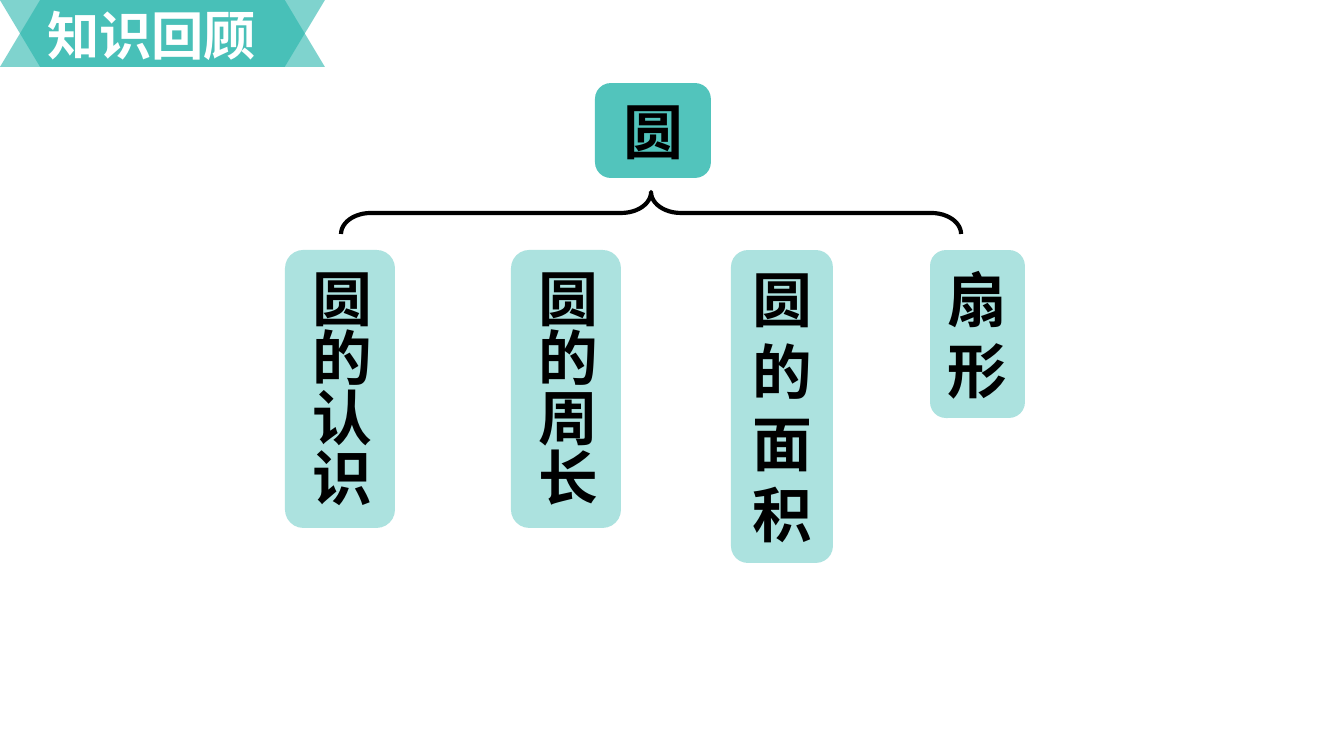
from dataclasses import dataclass

from lxml.etree import SubElement
from pptx import Presentation
from pptx.dml.color import RGBColor
from pptx.enum.shapes import MSO_SHAPE as Shape
from pptx.enum.text import MSO_ANCHOR as Anchor, MSO_AUTO_SIZE as AutoSize, PP_ALIGN as Align
from pptx.oxml.ns import qn
from pptx.util import Pt

PX = 914400 / 134.4  # EMU in one px


@dataclass(frozen=True)
class Theme:
    font: str = "Noto Sans CJK SC"
    teal: str = "1FB3A9"
    ink: str = "000000"
    white: str = "FFFFFF"
    title_size: int = 28
    node_size: int = 32
    brace_width: float = 2.25
    ribbon_alpha: int = 57
    root_alpha: int = 77
    branch_alpha: int = 37


@dataclass(frozen=True)
class Area:
    left: int
    top: int
    width: int
    height: int

    def emu(self) -> list[int]:
        return [round(v * PX) for v in (self.left, self.top, self.width, self.height)]


@dataclass(frozen=True)
class Node:
    text: str
    area: Area
    alpha: int
    vertical: bool = False


THEME = Theme()
BRANCH_TOP = 250


def branch(text: str, left: int, width: int, height: int, vertical: bool = False) -> Node:
    return Node(text, Area(left, BRANCH_TOP, width, height), THEME.branch_alpha, vertical)


RIBBON = Area(0, 0, 325, 67)
TITLE = Area(34, -3, 262, 77)
BRACE = Area(630, -97, 42, 620)  # before its quarter turn
NODES = [
    Node("圆", Area(595, 83, 116, 95), THEME.root_alpha),
    branch("圆的认识", 285, 110, 278, vertical=True),
    branch("圆的周长", 511, 110, 278, vertical=True),
    branch("圆的面积", 731, 102, 313),
    branch("扇形", 930, 95, 168),
]


def add_filled(page, kind: Shape, area: Area, alpha: int):
    """Add a borderless teal shape with the given opacity in percent."""
    shape = page.shapes.add_shape(kind, *area.emu())
    shape.shadow.inherit = False
    shape.line.fill.background()
    shape.fill.solid()
    shape.fill.fore_color.rgb = RGBColor.from_string(THEME.teal)
    color = shape.fill._xPr.find(f".//{qn('a:srgbClr')}")
    SubElement(color, qn("a:alpha"), val=str(alpha * 1000))
    return shape


def write(shape, text: str, size: int, color: str, align: Align) -> None:
    """Put one bold paragraph into a shape or text box."""
    frame = shape.text_frame
    frame.word_wrap = True
    frame.auto_size = AutoSize.SHAPE_TO_FIT_TEXT
    para = frame.paragraphs[0]
    para.text = text
    para.alignment = align
    font = para.font
    font.name, font.size, font.bold = THEME.font, Pt(size), True
    font.color.rgb = RGBColor.from_string(color)
    SubElement(font._rPr, qn("a:ea"), typeface=THEME.font)


def add_ribbon(page) -> None:
    for mirrored in (True, False):
        band = add_filled(page, Shape.PARALLELOGRAM, RIBBON, THEME.ribbon_alpha)
        band.adjustments[0] = 0.6
        if mirrored:
            band._element.spPr.xfrm.set("flipH", "1")
    box = page.shapes.add_textbox(*TITLE.emu())
    write(box, "知识回顾", THEME.title_size, THEME.white, Align.JUSTIFY)


def add_brace(page) -> None:
    brace = page.shapes.add_shape(Shape.LEFT_BRACE, *BRACE.emu())
    brace.rotation = 90
    brace.adjustments[0], brace.adjustments[1] = 0.71, 0.5
    brace.shadow.inherit = False
    brace.fill.background()
    brace.line.color.rgb = RGBColor.from_string(THEME.ink)
    brace.line.width = Pt(THEME.brace_width)


def add_node(page, node: Node) -> None:
    shape = add_filled(page, Shape.ROUNDED_RECTANGLE, node.area, node.alpha)
    write(shape, node.text, THEME.node_size, THEME.ink, Align.CENTER)
    shape.text_frame.vertical_anchor = Anchor.MIDDLE
    if node.vertical:
        shape.text_frame._txBody.bodyPr.set("vert", "eaVert")


def main() -> None:
    deck = Presentation()
    deck.slide_width, deck.slide_height = round(1344 * PX), round(756 * PX)
    page = deck.slides.add_slide(deck.slide_layouts[6])

    # Title ribbon
    add_ribbon(page)
    # Topic tree
    add_brace(page)
    for node in NODES:
        add_node(page, node)

    deck.save("out.pptx")


if __name__ == "__main__":
    main()
